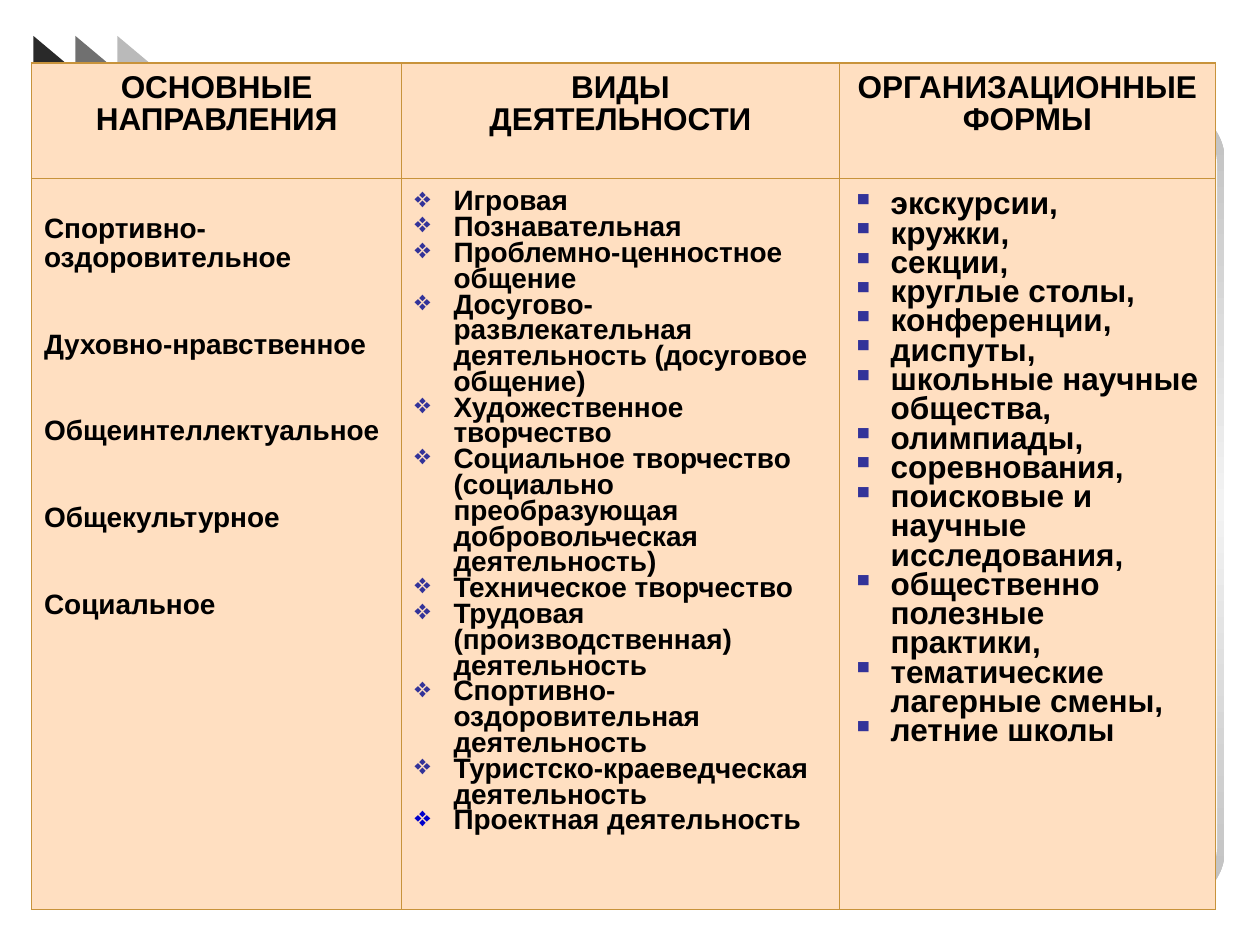
from lxml import etree
from pptx import Presentation
from pptx import util as u
from pptx.dml.color import RGBColor
from pptx.enum import shapes, text
from pptx.oxml.ns import qn

WIDTH, HEIGHT = 10, 7.5
FONT = "Arial"
COLORS = {
    "ink": "000000",
    "paper": "FFFFFF",
    "cell": "FFDFC1",
    "border": "C8933B",
    "silver": "C0C0C0",
    "shine": "F3F3F3",
    "bullet": "333399",
    "last_bullet": "0000CC",
}

TABLE_LEFT, TABLE_TOP = 0.25, 0.5
COLUMNS = [2.94, 3.47, 2.99]
ROWS = [0.92, 5.8]

HEADERS = [
    ["ОСНОВНЫЕ НАПРАВЛЕНИЯ"],
    ["ВИДЫ", "ДЕЯТЕЛЬНОСТИ"],
    ["ОРГАНИЗАЦИОННЫЕ ФОРМЫ"],
]
DIRECTIONS = [
    "Спортивно-оздоровительное",
    "Духовно-нравственное",
    "Общеинтеллектуальное",
    "Общекультурное",
    "Социальное",
]
ACTIVITIES = [
    "Игровая",
    "Познавательная",
    "Проблемно-ценностное общение",
    "Досугово-развлекательная деятельность (досуговое общение)",
    "Художественное творчество",
    "Социальное творчество (социально преобразующая добровольческая деятельность)",
    "Техническое творчество",
    "Трудовая (производственная) деятельность",
    "Спортивно-оздоровительная деятельность",
    "Туристско-краеведческая деятельность",
    "Проектная деятельность",
]
FORMS = [
    "экскурсии,",
    "кружки,",
    "секции,",
    "круглые столы,",
    "конференции,",
    "диспуты,",
    "школьные научные общества,",
    "олимпиады,",
    "соревнования,",
    "поисковые и научные исследования,",
    "общественно полезные практики,",
    "тематические лагерные смены,",
    "летние школы",
]

# Formats of the cells: text size, line spacing, gap, top margin, bullet
HEADER_STYLE = {"size": 18, "spacing": 0.93, "top": 0.07, "align": text.PP_ALIGN.CENTER}
BODY_STYLES = [
    {"size": 16, "spacing": 0.93, "top": 0.29, "gap": 33},
    {"size": 16, "spacing": 0.83, "top": 0.09, "bullet": "❖"},
    {"size": 18, "spacing": 0.83, "top": 0.1, "bullet": "▪"},
]


def rgb(name):
    return RGBColor.from_string(COLORS[name])


def set_all(target, values):
    for name, value in values.items():
        setattr(target, name, value)


def add_color(parent, name):
    etree.SubElement(parent, qn("a:srgbClr"), val=COLORS[name])


def add_plain_shape(page, kind, left, top, width, height):
    shape = page.shapes.add_shape(
        kind, u.Inches(left), u.Inches(top), u.Inches(width), u.Inches(height))
    shape.shadow.inherit = False
    shape.line.fill.background()
    return shape


def fill_solid(shape, name, opacity):
    shape.fill.solid()
    shape.fill.fore_color.rgb = rgb(name)
    color = shape.fill._xPr.find(".//" + qn("a:srgbClr"))
    etree.SubElement(color, qn("a:alpha"), val=str(opacity * 1000))


def fill_gradient(shape, stops):
    shape.fill.gradient()
    shape.fill.gradient_angle = 270
    stop_list = shape.fill._xPr.find(".//" + qn("a:gsLst"))
    for old in list(stop_list):
        stop_list.remove(old)
    for position, name in stops:
        stop = etree.SubElement(stop_list, qn("a:gs"), pos=str(position * 1000))
        add_color(stop, name)


def add_frame(page):
    rounded = shapes.MSO_SHAPE.ROUNDED_RECTANGLE
    outer = add_plain_shape(page, rounded, 0.26, 0.85, 9.46, 6.32)
    outer.adjustments[0] = 0.066
    fill_gradient(outer, [(0, "silver"), (50, "shine"), (100, "silver")])
    inner = add_plain_shape(page, rounded, 0.33, 0.92, 9.33, 6.18)
    inner.adjustments[0] = 0.062
    fill_solid(inner, "paper", 90)


def add_arrows(page):
    for index, opacity in enumerate([84, 56, 27]):
        arrow = add_plain_shape(page, shapes.MSO_SHAPE.ISOSCELES_TRIANGLE,
                                0.18 + index * WIDTH / 30, 0.37, 0.42, 0.25)
        arrow.rotation = 90
        fill_solid(arrow, "ink", opacity)


def add_bullet(para, character, color):
    properties = para._p.get_or_add_pPr()
    set_indent = {"marL": 0.31, "indent": -0.31}
    for name, inches in set_indent.items():
        properties.set(name, str(u.Inches(inches)))
    add_color(etree.SubElement(properties, qn("a:buClr")), color)
    etree.SubElement(properties, qn("a:buChar"), char=character)


def add_borders(cell):
    properties = cell._tc.get_or_add_tcPr()
    for side in ("lnL", "lnR", "lnT", "lnB"):
        line = etree.SubElement(properties, qn("a:" + side), w=str(u.Pt(0.75)))
        add_color(etree.SubElement(line, qn("a:solidFill")), "border")


def fill_cell(cell, lines, style):
    add_borders(cell)
    cell.fill.solid()
    cell.fill.fore_color.rgb = rgb("cell")
    set_all(cell, {
        "margin_left": u.Inches(0.1), "margin_right": u.Inches(0.1),
        "margin_top": u.Inches(style["top"]), "margin_bottom": u.Inches(0.05),
        "vertical_anchor": text.MSO_ANCHOR.TOP,
    })
    frame = cell.text_frame
    for index, line in enumerate(lines):
        para = frame.add_paragraph() if index else frame.paragraphs[0]
        if "bullet" in style:
            last = line == ACTIVITIES[-1]
            add_bullet(para, style["bullet"], "last_bullet" if last else "bullet")
        set_all(para, {
            "alignment": style.get("align", text.PP_ALIGN.LEFT),
            "line_spacing": style["spacing"],
            "space_before": u.Pt(style.get("gap", 0) if index else 0),
        })
        span = para.add_run()
        span.text = line
        set_all(span.font, {"name": FONT, "size": u.Pt(style["size"]), "bold": True})
        span.font.color.rgb = rgb("ink")


def add_activity_table(page):
    table = page.shapes.add_table(
        len(ROWS), len(COLUMNS), u.Inches(TABLE_LEFT), u.Inches(TABLE_TOP),
        u.Inches(sum(COLUMNS)), u.Inches(sum(ROWS))).table
    set_all(table, {"first_row": False, "horz_banding": False})
    for row, height in zip(table.rows, ROWS):
        row.height = u.Inches(height)
    bodies = [DIRECTIONS, ACTIVITIES, FORMS]
    for index, width in enumerate(COLUMNS):
        table.columns[index].width = u.Inches(width)
        fill_cell(table.cell(0, index), HEADERS[index], HEADER_STYLE)
        fill_cell(table.cell(1, index), bodies[index], BODY_STYLES[index])


def main():
    deck = Presentation()
    set_all(deck, {"slide_width": u.Inches(WIDTH), "slide_height": u.Inches(HEIGHT)})
    page = deck.slides.add_slide(deck.slide_layouts[6])
    # Backdrop
    add_frame(page)
    add_arrows(page)
    # Content
    add_activity_table(page)
    deck.save("out.pptx")


if __name__ == "__main__":
    main()
